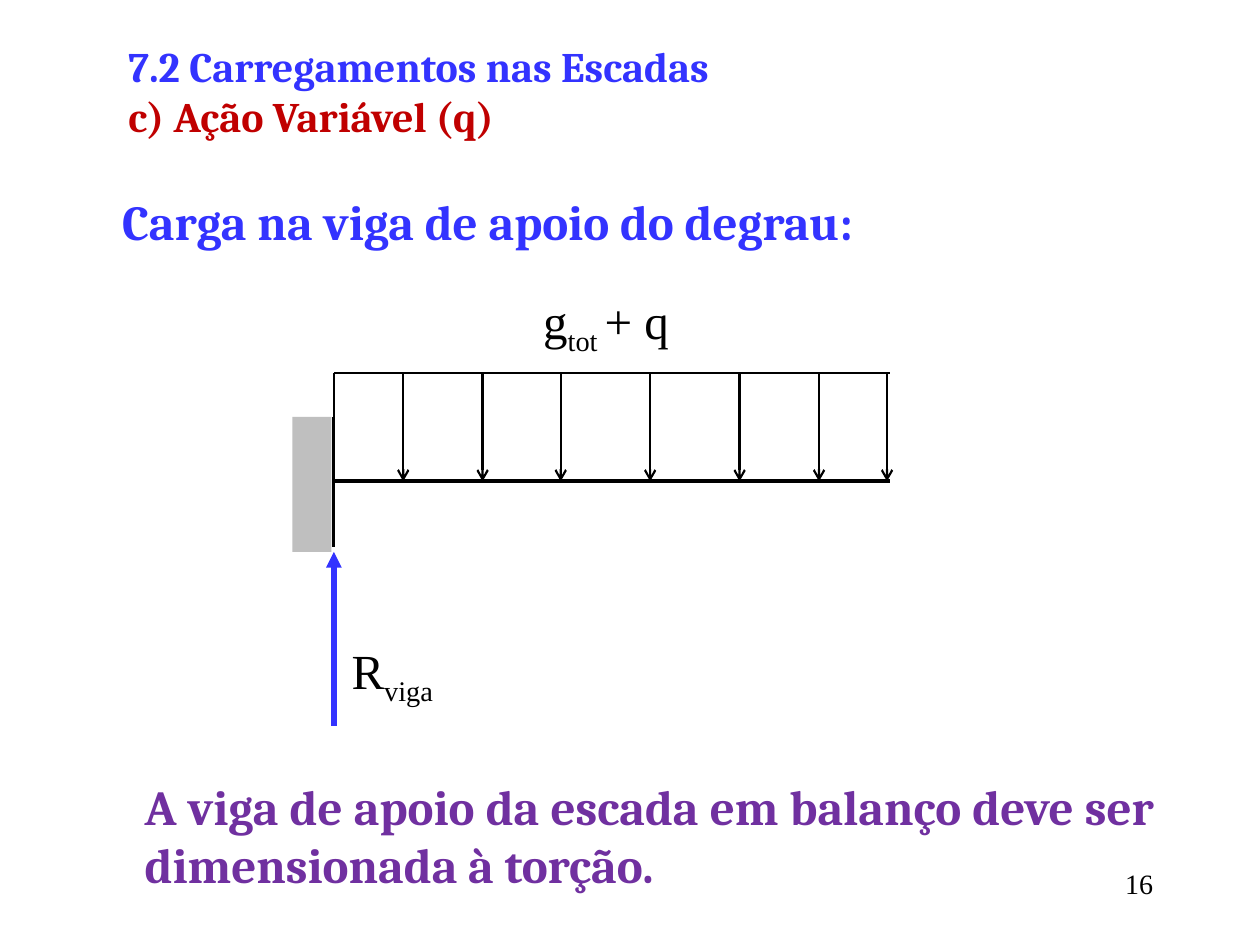
import pptx
import pptx.dml.color
import pptx.enum.shapes
import pptx.enum.text
import pptx.oxml
import pptx.oxml.ns
import pptx.util
from lxml import etree

COLORS = {"blue": "3333FF", "red": "C00000", "purple": "7030A0",
          "black": "000000", "wall": "BFBFBF", "white": "FFFFFF"}
SLIDE_WIDTH, SLIDE_HEIGHT = pptx.util.Inches(10), pptx.util.Inches(7.5)
COLUMNS, ROWS = 100, 75  # grid laid over the slide

ALIGN = pptx.enum.text.PP_ALIGN
SUBSCRIPT = -25000


def grid_x(column):
    return round(SLIDE_WIDTH * column / COLUMNS)


def grid_y(row):
    return round(SLIDE_HEIGHT * row / ROWS)


def on_grid(box):
    left, top, width, height = box
    return grid_x(left), grid_y(top), grid_x(width), grid_y(height)


def rgb(color):
    return pptx.dml.color.RGBColor.from_string(COLORS[color])


def add_run(paragraph, text, size, color, font="Cambria", bold=False, baseline=0):
    run = paragraph.add_run()
    run.text = text
    run.font.name, run.font.size, run.font.bold = font, pptx.util.Pt(size), bold
    run.font.color.rgb = rgb(color)
    if baseline:
        run._r.get_or_add_rPr().set("baseline", str(baseline))


def add_rectangle(slide, box, color):
    rectangle = slide.shapes.add_shape(
        pptx.enum.shapes.MSO_SHAPE.RECTANGLE, *on_grid(box))
    rectangle.shadow.inherit = False
    rectangle.fill.solid()
    rectangle.fill.fore_color.rgb = rgb(color)
    rectangle.line.fill.background()
    return rectangle


def add_line(slide, start, end, width, color="black", head=None):
    line = slide.shapes.add_connector(
        pptx.enum.shapes.MSO_CONNECTOR.STRAIGHT,
        grid_x(start[0]), grid_y(start[1]), grid_x(end[0]), grid_y(end[1]))
    line.line.width = pptx.util.Pt(width)
    line.line.color.rgb = rgb(color)
    if head:
        etree.SubElement(line.line._get_or_add_ln(),
                         pptx.oxml.ns.qn("a:tailEnd"), type=head)
    etree.SubElement(line._element.spPr, pptx.oxml.ns.qn("a:effectLst"))


def statement(slide, box, lines, size):
    """Bold justified text, one (text, color) pair per paragraph."""
    frame = slide.shapes.add_textbox(*on_grid(box)).text_frame
    frame.word_wrap = True
    frame.auto_size = pptx.enum.text.MSO_AUTO_SIZE.SHAPE_TO_FIT_TEXT
    for index, (text, color) in enumerate(lines):
        paragraph = frame.paragraphs[0] if index == 0 else frame.add_paragraph()
        paragraph.alignment = ALIGN.JUSTIFY
        add_run(paragraph, text, size, color, bold=True)


def load_label(slide, box, parts, alignment):
    """Symbol with subscripts, as (text, baseline) pairs."""
    frame = add_rectangle(slide, box, "white").text_frame
    frame.word_wrap = True
    frame.vertical_anchor = pptx.enum.text.MSO_ANCHOR.MIDDLE
    frame.margin_left = frame.margin_top = frame.margin_bottom = 0
    frame.margin_right = pptx.util.Inches(0.01)
    paragraph = frame.paragraphs[0]
    paragraph.alignment = alignment
    for text, baseline in parts:
        add_run(paragraph, text, 28, "black", "Times New Roman", baseline=baseline)


def beam_diagram(slide, box):
    """Cantilever beam: the box spans the load, from its top to the beam axis."""
    left, top, width, height = box
    right, axis = left + width, top + height

    # Load outline and beam
    add_line(slide, (left, top), (left, axis), 1.25)
    add_line(slide, (left, axis), (right, axis), 2.25)

    # Fixed support
    wall_top, wall_width, wall_height = top + 3.5, 3.1, 10.7
    wall_bottom = wall_top + wall_height
    add_line(slide, (left, wall_bottom - 0.4), (left, wall_top), 1.75)
    add_rectangle(slide, (left - 0.2 - wall_width, wall_top, wall_width, wall_height),
                  "wall")

    # Distributed load
    add_line(slide, (left, top), (right, top), 1.25)
    for offset in (5.5, 11.8, 18, 25.1, 32.2, 38.5, 43.9):
        add_line(slide, (left + offset, top), (left + offset, axis), 1.25, head="arrow")
    load_label(slide, (left + 15.7, top - 6.5, 11.9, 5.2),
               [("g", 0), ("tot ", SUBSCRIPT), ("+ q", 0)], ALIGN.CENTER)

    # Reaction
    add_line(slide, (left, wall_bottom + 13.8), (left, wall_bottom), 3,
             "blue", "triangle")
    load_label(slide, (left + 1.4, wall_bottom + 6.5, 11.9, 6.4),
               [("R", 0), ("viga", SUBSCRIPT)], ALIGN.LEFT)


def page_number(slide, box, number):
    frame = slide.shapes.add_textbox(*on_grid(box)).text_frame
    frame.word_wrap = True
    paragraph = frame.paragraphs[0]
    paragraph.alignment = ALIGN.RIGHT
    add_run(paragraph, number, 16, "black", "Times New Roman")


def main():
    presentation = pptx.Presentation()
    presentation.slide_width, presentation.slide_height = SLIDE_WIDTH, SLIDE_HEIGHT
    slide = presentation.slides.add_slide(presentation.slide_layouts[6])

    page_number(slide, (71.7, 68.3, 20.8, 5), "16")
    statement(slide, (9.2, 2.7, 86.5, 9.1),
              [("7.2 Carregamentos nas Escadas", "blue"),
               ("c) Ação Variável (q)", "red")], 24)
    statement(slide, (8.7, 14.7, 66.5, 5.7),
              [("Carga na viga de apoio do degrau:", "blue")], 28)
    beam_diagram(slide, (26.5, 29.6, 44.1, 8.6))
    statement(slide, (10.5, 61.1, 82.1, 10.4),
              [("A viga de apoio da escada em balanço deve ser "
                "dimensionada à torção.", "purple")], 28)
    presentation.save("out.pptx")


if __name__ == "__main__":
    main()
